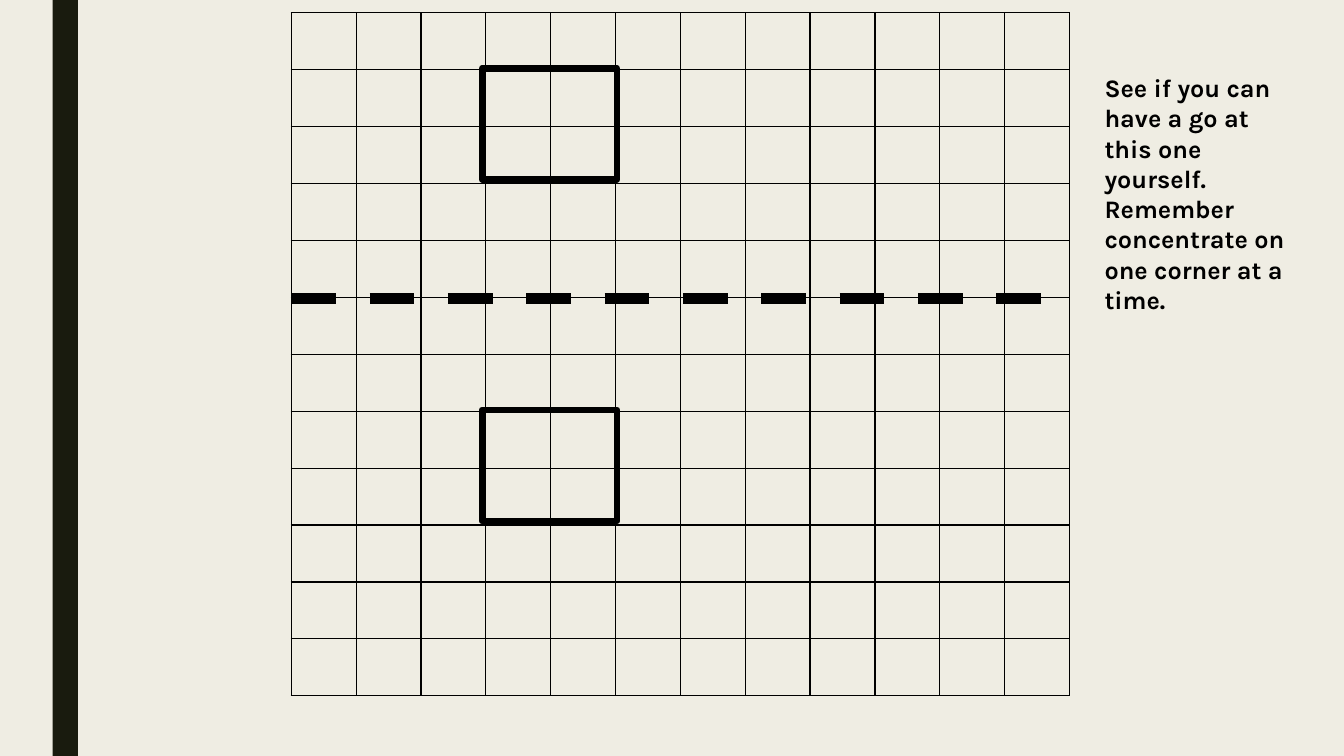
import pptx
import pptx.dml.color
import pptx.enum.dml
import pptx.enum.shapes
import pptx.oxml
import pptx.oxml.ns
import pptx.util

BLACK = "000000"
GRID_LEFT, GRID_TOP = 208.1, 9.2
CELL_WIDTH, CELL_HEIGHT = 46.32, 40.65
GRID_COUNT = 12


def points(*lengths):
    return [pptx.util.Pt(length) for length in lengths]


def color(hex_string):
    return pptx.dml.color.RGBColor.from_string(hex_string)


def add_rectangle(page, left, top, width, height, fill=None, line=None, weight=1):
    box = page.shapes.add_shape(
        pptx.enum.shapes.MSO_SHAPE.RECTANGLE, *points(left, top, width, height))
    box.shadow.inherit = False
    if fill:
        box.fill.solid()
        box.fill.fore_color.rgb = color(fill)
    else:
        box.fill.background()
    if line:
        box.line.color.rgb = color(line)
        box.line.width = pptx.util.Pt(weight)
    else:
        box.line.fill.background()


def set_cell_borders(cell, hex_string, weight):
    properties = cell._tc.get_or_add_tcPr()
    for position, side in enumerate(("lnL", "lnR", "lnT", "lnB")):
        border = pptx.oxml.parse_xml(
            f'<a:{side} {pptx.oxml.ns.nsdecls("a")} w="{pptx.util.Pt(weight)}">'
            f'<a:solidFill><a:srgbClr val="{hex_string}"/></a:solidFill></a:{side}>')
        properties.insert(position, border)


def add_grid(page):
    frame = page.shapes.add_table(
        GRID_COUNT, GRID_COUNT,
        *points(GRID_LEFT, GRID_TOP, GRID_COUNT * CELL_WIDTH, GRID_COUNT * CELL_HEIGHT))
    table = frame.table
    table.first_row = False
    table.horz_banding = False
    for column in table.columns:
        column.width = pptx.util.Pt(CELL_WIDTH)
    for row in table.rows:
        row.height = pptx.util.Pt(CELL_HEIGHT)
    for cell in table.iter_cells():
        cell.fill.background()
        set_cell_borders(cell, BLACK, 1)


def add_dashed_line(page, left, top, right, weight):
    line = page.shapes.add_connector(
        pptx.enum.shapes.MSO_CONNECTOR.STRAIGHT, *points(left, top, right, top))
    line.line.color.rgb = color(BLACK)
    line.line.width = pptx.util.Pt(weight)
    line.line.dash_style = pptx.enum.dml.MSO_LINE.DASH
    line._element.spPr.append(
        pptx.oxml.parse_xml(f'<a:effectLst {pptx.oxml.ns.nsdecls("a")}/>'))


def add_text(page, text, left, top, width, height, size=18, font="Karla",
             fill=BLACK, bold=False):
    box = page.shapes.add_textbox(*points(left, top, width, height))
    box.text_frame.word_wrap = True
    para = box.text_frame.paragraphs[0]
    span = para.add_run()
    span.text = text
    span.font.size = pptx.util.Pt(size)
    span.font.name = font
    span.font.bold = bold
    span.font.color.rgb = color(fill)


def main():
    deck = pptx.Presentation()
    deck.slide_width, deck.slide_height = points(960, 540)
    page = deck.slides.add_slide(deck.slide_layouts[6])
    page.background.fill.solid()
    page.background.fill.fore_color.rgb = color("EFEDE3")

    # Side bar
    add_rectangle(page, 37.6, 0, 18, 540, fill="191B0E")

    # Grid with its mirror line
    add_grid(page)
    mirror_top = GRID_TOP + 5 * CELL_HEIGHT + 0.5
    add_dashed_line(page, GRID_LEFT, mirror_top, GRID_LEFT + GRID_COUNT * CELL_WIDTH, 8)

    # Square and its reflection, six rows apart
    for first_row in (1, 7):
        add_rectangle(page, 344.3, GRID_TOP + first_row * CELL_HEIGHT - 1,
                      96.5, 79.4, line=BLACK, weight=4.5)

    # Instruction
    add_text(page, "See if you can have a go at this one yourself. "
             "Remember concentrate on one corner at a time.",
             781.9, 48.2, 152, 160, bold=True)

    deck.save("out.pptx")


if __name__ == "__main__":
    main()
